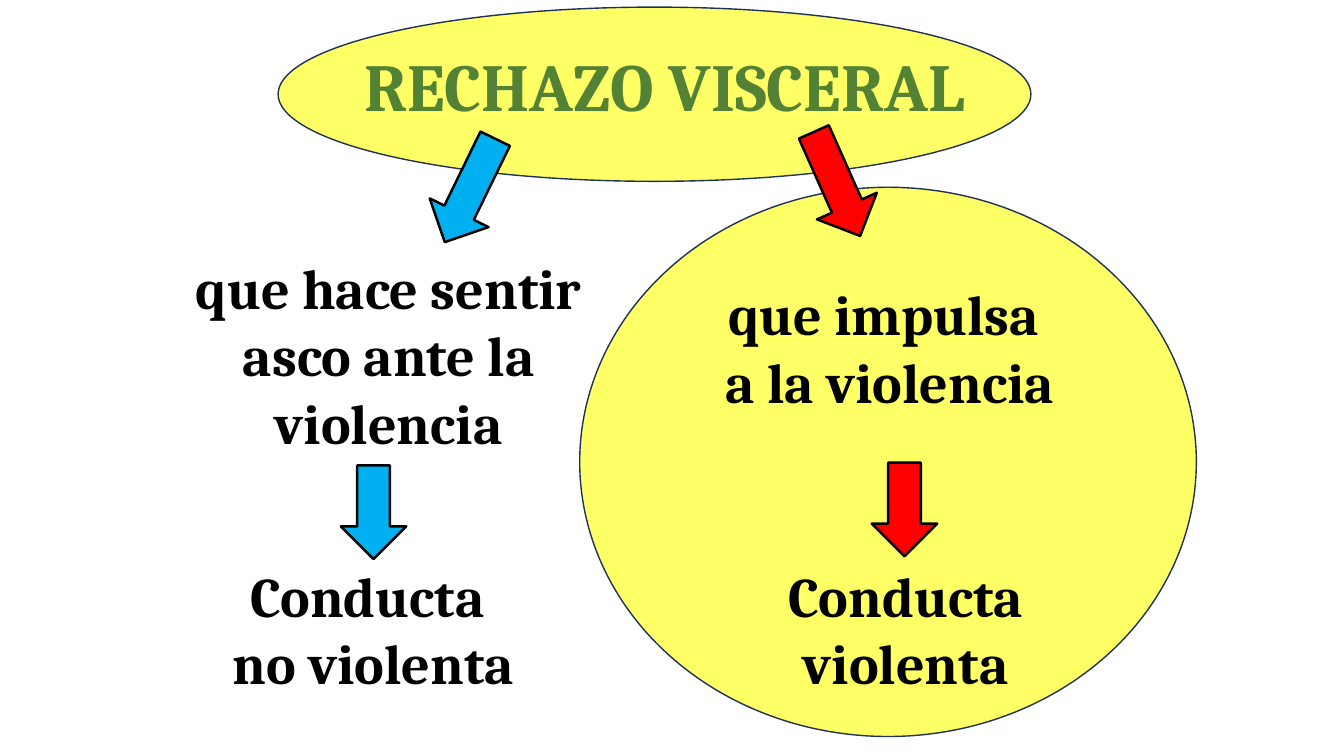
from dataclasses import dataclass

from pptx import Presentation
from pptx import util as u
from pptx.dml import color
from pptx.enum import shapes, text


@dataclass(frozen=True)
class Theme:
    font: str = "Cambria"
    title_size: int = 48
    body_size: int = 40
    ellipse_line: float = 1
    arrow_line: float = 1.75
    yellow: str = "FFFF66"
    navy: str = "1E3256"
    green: str = "548235"
    black: str = "000000"
    blue: str = "00B0F0"
    red: str = "FF0000"


THEME = Theme()


def rgb(value):
    return color.RGBColor.from_string(value)


def apply(target, values):
    for name, value in values.items():
        setattr(target, name, value)


def add_figure(page, kind, place, fill, line, width, rotation=0):
    figure = page.shapes.add_shape(kind, *map(u.Cm, place))
    figure.shadow.inherit = False
    figure.rotation = rotation
    figure.fill.solid()
    figure.fill.fore_color.rgb = rgb(fill)
    figure.line.color.rgb = rgb(line)
    figure.line.width = u.Pt(width)


def add_ellipse(page, place):
    add_figure(page, shapes.MSO_SHAPE.OVAL, place,
               THEME.yellow, THEME.navy, THEME.ellipse_line)


def add_arrow(page, place, fill, rotation=0):
    add_figure(page, shapes.MSO_SHAPE.DOWN_ARROW, place,
               fill, THEME.black, THEME.arrow_line, rotation)


def add_label(page, place, lines, size=THEME.body_size, ink=THEME.black, spacing=None):
    box = page.shapes.add_textbox(*map(u.Cm, place))
    apply(box.text_frame, {
        "word_wrap": True,
        "auto_size": text.MSO_AUTO_SIZE.SHAPE_TO_FIT_TEXT,
    })
    para = box.text_frame.paragraphs[0]
    apply(para, {"alignment": text.PP_ALIGN.CENTER, **(spacing or {})})
    for index, line in enumerate(lines):
        if index:
            para.add_line_break()
        span = para.add_run()
        span.text = line
        apply(span.font, {"name": THEME.font, "size": u.Pt(size), "bold": True})
        span.font.color.rgb = rgb(ink)


def main():
    deck = Presentation()
    apply(deck, {"slide_width": u.Cm(33.87), "slide_height": u.Cm(19.05)})
    page = deck.slides.add_slide(deck.slide_layouts[6])

    add_ellipse(page, (14.61, 4.72, 15.54, 13.84))
    add_ellipse(page, (7.01, 0.18, 18.97, 4.39))

    add_label(page, (0, 0.86, 33.87, 2.29), ["RECHAZO VISCERAL "],
              THEME.title_size, THEME.green,
              {"line_spacing": 1.07, "space_after": u.Pt(8)})
    add_label(page, (4.22, 6.27, 11.15, 5.38), ["que hace sentir asco ante la violencia"])
    add_label(page, (17.75, 6.93, 9.35, 3.68), ["que impulsa ", "a la violencia"])
    add_label(page, (3.84, 14.02, 11.15, 3.68), ["Conducta ", "no violenta"])
    add_label(page, (17.25, 14.02, 11.15, 3.68), ["Conducta violenta"])

    add_arrow(page, (11.02, 3.35, 1.65, 2.9), THEME.blue, 26)
    add_arrow(page, (20.27, 3.2, 1.65, 2.87), THEME.red, 336)
    add_arrow(page, (8.59, 11.73, 1.65, 2.36), THEME.blue)
    add_arrow(page, (21.97, 11.66, 1.65, 2.36), THEME.red)

    deck.save("out.pptx")


if __name__ == "__main__":
    main()
